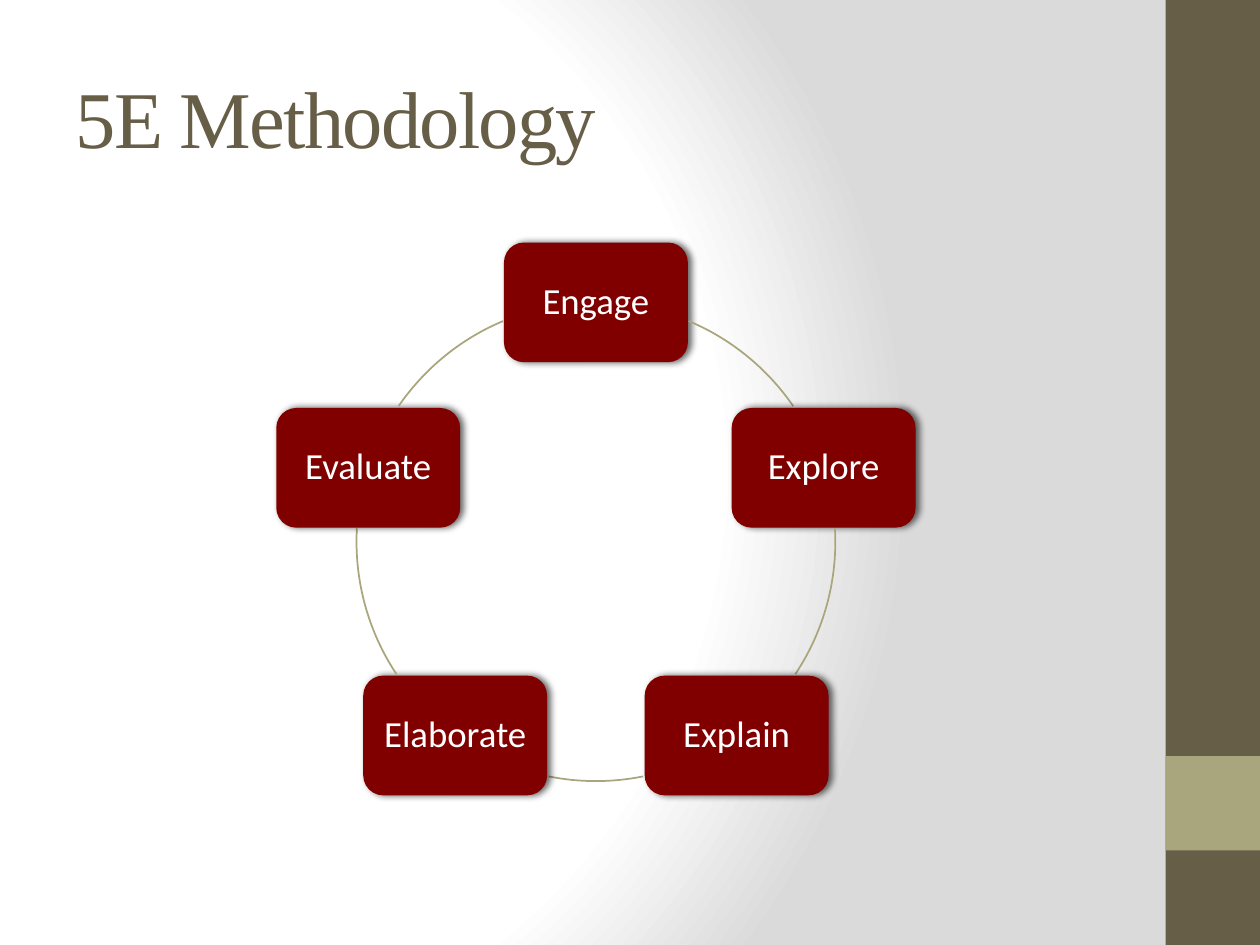
from dataclasses import dataclass
import math

import pptx
import pptx.dml.color
import pptx.enum.shapes
import pptx.enum.text
import pptx.oxml
import pptx.oxml.ns
import pptx.util

Inches = pptx.util.Inches
Pt = pptx.util.Pt
Shape = pptx.enum.shapes.MSO_SHAPE
Align = pptx.enum.text.PP_ALIGN
Anchor = pptx.enum.text.MSO_ANCHOR

BROWN, OLIVE, MAROON, WHITE = "675E47", "A9A57C", "800000", "FFFFFF"
CENTER_X, CENTER_Y, RADIUS = 4.73, 4.3, 1.9
BOX_WIDTH, BOX_HEIGHT = 1.46, 0.95
DRAWING = 'xmlns:a="http://schemas.openxmlformats.org/drawingml/2006/main"'


@dataclass
class Stage:
    """A phase of the cycle and the arc after it, in degrees clockwise from the top."""
    name: str
    arc_start: float
    arc_end: float


STAGES = [
    Stage("Engage", 22.8, 55.5),
    Stage("Explore", 86.8, 123.6),
    Stage("Explain", 168.6, 191.4),
    Stage("Elaborate", 236.4, 273.2),
    Stage("Evaluate", 304.5, 337.2),
]


def color(value: str) -> pptx.dml.color.RGBColor:
    return pptx.dml.color.RGBColor.from_string(value)


def add_filled(page, kind, left: float, top: float, width: float, height: float, fill: str):
    box = page.shapes.add_shape(kind, Inches(left), Inches(top), Inches(width), Inches(height))
    box.shadow.inherit = False
    box.fill.solid()
    box.fill.fore_color.rgb = color(fill)
    box.line.fill.background()
    return box


def add_span(para, text: str, font: str, size: float, ink: str):
    span = para.add_run()
    span.text = text
    span.font.name = font
    span.font.size = Pt(size)
    span.font.color.rgb = color(ink)
    return span


def set_background(page) -> None:
    """Radial gradient, centred towards the left edge."""
    page.background.fill.gradient()
    gradient = page.element.find(".//" + pptx.oxml.ns.qn("a:gradFill"))
    stops = "".join(
        f'<a:gs pos="{place * 1000}"><a:srgbClr val="{value}"/></a:gs>'
        for place, value in [(0, WHITE), (75, WHITE), (100, "DADADA")])
    gradient.getparent().replace(gradient, pptx.oxml.parse_xml(
        f'<a:gradFill {DRAWING} rotWithShape="1"><a:gsLst>{stops}</a:gsLst>'
        '<a:path path="circle"><a:fillToRect l="20000" t="50000" r="100000" b="50000"/>'
        '</a:path></a:gradFill>'))


def add_title(page, text: str) -> None:
    title = page.shapes.title
    title.left, title.top = Inches(0.5), Inches(0.3)
    title.width, title.height = Inches(8.33), Inches(1.25)
    frame = title.text_frame
    frame.auto_size = pptx.enum.text.MSO_AUTO_SIZE.NONE
    frame.vertical_anchor = Anchor.MIDDLE
    para = frame.paragraphs[0]
    para.alignment = Align.LEFT
    span = add_span(para, text, "Times New Roman", 46, BROWN)
    span.font._element.set("spc", "-100")


def add_stage_box(page, name: str, angle: float) -> None:
    middle_x = CENTER_X + RADIUS * math.sin(math.radians(angle))
    middle_y = CENTER_Y - RADIUS * math.cos(math.radians(angle))
    box = add_filled(page, Shape.ROUNDED_RECTANGLE, middle_x - BOX_WIDTH / 2,
                     middle_y - BOX_HEIGHT / 2, BOX_WIDTH, BOX_HEIGHT, MAROON)
    # Soft shadow to the right
    effects = box.element.spPr.find(pptx.oxml.ns.qn("a:effectLst"))
    effects.append(pptx.oxml.parse_xml(
        f'<a:outerShdw {DRAWING} blurRad="{Pt(4)}" dist="{Pt(2)}" dir="0" algn="ctr" '
        'rotWithShape="0"><a:srgbClr val="000000"><a:alpha val="60000"/></a:srgbClr>'
        '</a:outerShdw>'))
    frame = box.text_frame
    frame.word_wrap = True
    frame.vertical_anchor = Anchor.MIDDLE
    frame.margin_left = frame.margin_right = Inches(0.09)
    frame.margin_top = frame.margin_bottom = Inches(0.09)
    para = frame.paragraphs[0]
    para.alignment = Align.CENTER
    para.line_spacing = 0.9
    add_span(para, name, "Calibri", 21, WHITE)


def add_arc(page, start: float, end: float) -> None:
    arc = page.shapes.add_shape(Shape.ARC, Inches(CENTER_X - RADIUS), Inches(CENTER_Y - RADIUS),
                                Inches(2 * RADIUS), Inches(2 * RADIUS))
    arc.shadow.inherit = False
    arc.fill.background()
    arc.line.color.rgb = color(OLIVE)
    arc.line.width = Pt(1)
    # Preset angles run from the right, in 60000ths of a degree over 100000
    for index, angle in enumerate((start, end)):
        arc.adjustments[index] = (angle - 90) % 360 * 0.6


def main() -> None:
    deck = pptx.Presentation()
    deck.slide_width, deck.slide_height = Inches(10), Inches(7.5)
    page = deck.slides.add_slide(deck.slide_layouts[5])

    # Backdrop and side bar
    set_background(page)
    add_filled(page, Shape.RECTANGLE, 9.25, 0, 0.75, 7.5, BROWN)
    add_filled(page, Shape.RECTANGLE, 9.25, 6, 0.75, 0.75, OLIVE)

    add_title(page, "5E Methodology")

    # Cycle of stages, clockwise from the top
    for index, stage in enumerate(STAGES):
        add_stage_box(page, stage.name, index * 360 / len(STAGES))
        add_arc(page, stage.arc_start, stage.arc_end)

    deck.save("out.pptx")


if __name__ == "__main__":
    main()
